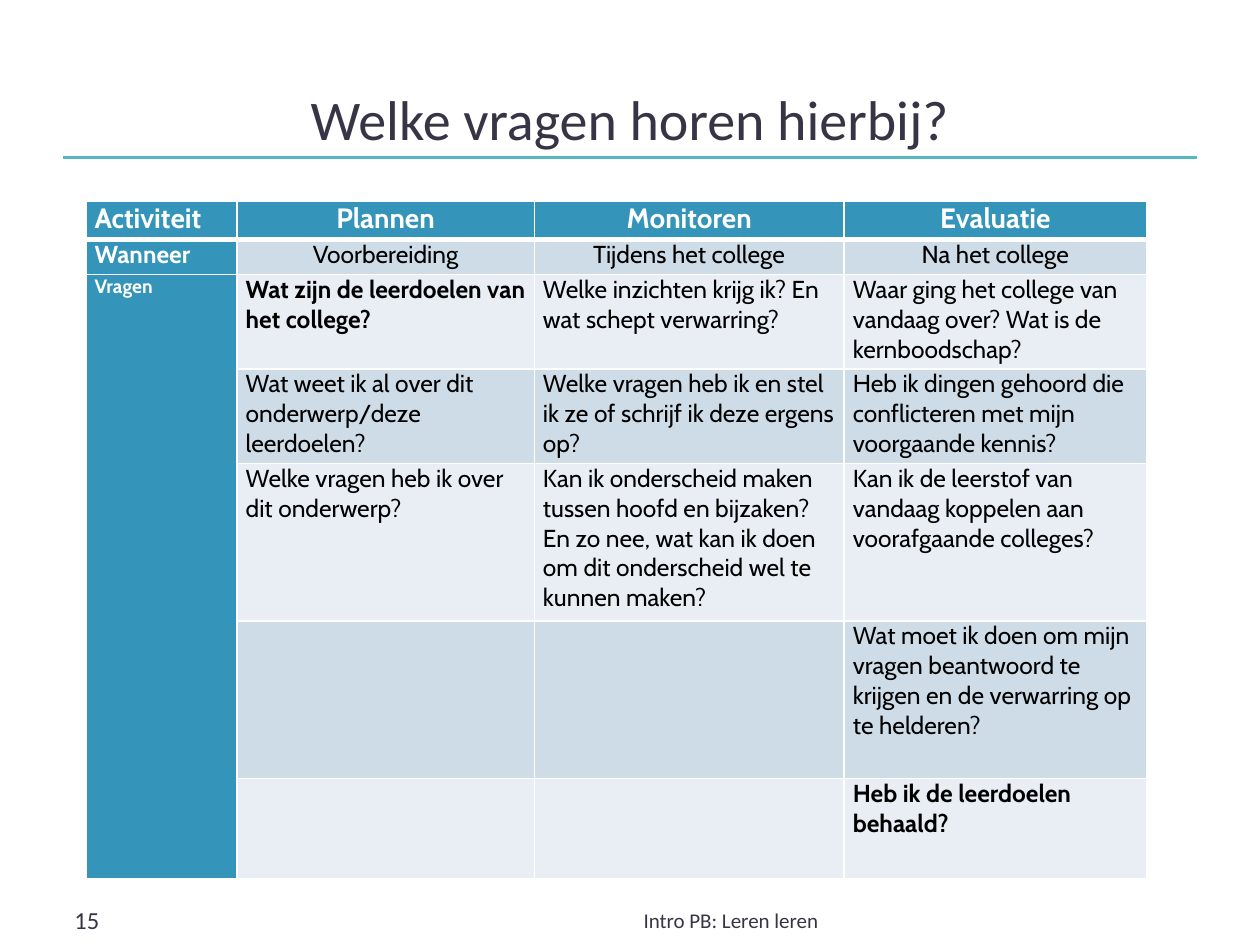
from lxml import etree
from pptx import Presentation
from pptx.dml.color import RGBColor
from pptx.enum.shapes import MSO_CONNECTOR
from pptx.enum.text import MSO_ANCHOR, PP_ALIGN
from pptx.oxml.ns import qn
from pptx.util import Pt

LEFT, CENTER = PP_ALIGN.LEFT, PP_ALIGN.CENTER
TOP, BOTTOM = MSO_ANCHOR.TOP, MSO_ANCHOR.BOTTOM
STRAIGHT = MSO_CONNECTOR.STRAIGHT

COLUMN_WIDTHS = [86.4, 169.9, 177.1, 172.8]
ROW_HEIGHTS = [21.6, 20.2, 54, 54, 90, 90, 56.9]
HEADINGS = ["Activiteit", "Plannen", "Monitoren", "Evaluatie"]
MOMENTS = ["Wanneer", "Voorbereiding", "Tijdens het college", "Na het college"]
QUESTIONS = [
    ["Vragen",
     "Wat zijn de leerdoelen van het college?",
     "Welke inzichten krijg ik? En wat schept verwarring?",
     "Waar ging het college van vandaag over? Wat is de kernboodschap?"],
    ["",
     "Wat weet ik al over dit onderwerp/deze leerdoelen?",
     "Welke vragen heb ik en stel ik ze of schrijf ik deze ergens op?",
     "Heb ik dingen gehoord die conflicteren met mijn voorgaande kennis?"],
    ["",
     "Welke vragen heb ik over dit onderwerp?",
     "Kan ik onderscheid maken tussen hoofd en bijzaken? En zo nee, "
     "wat kan ik doen om dit onderscheid wel te kunnen maken?",
     "Kan ik de leerstof van vandaag koppelen aan voorafgaande colleges?"],
    ["", "", "",
     "Wat moet ik doen om mijn vragen beantwoord te krijgen en de "
     "verwarring op te helderen?"],
    ["", "", "", "Heb ik de leerdoelen behaald?"],
]
GOAL_QUESTIONS = {(2, 1), (6, 3)}


def color(value):
    """Turn a hex string into a colour."""
    return RGBColor.from_string(value)


class SlideBuilder:
    """Holds the style and the current slide."""

    heading_font, table_font = "Calibri", "Cabin"
    ink, accent, rule = "373545", "3494BA", "58B6C0"
    white, black = "FFFFFF", "000000"
    bands = ["E8EEF3", "CEDCE7"]

    def __init__(self, slide):
        self.slide = slide

    def add_run(self, paragraph, text, size, font, hue, bold=False):
        """Add one styled run."""
        run = paragraph.add_run()
        run.text = text
        run.font.size = Pt(size)
        run.font.name = font
        run.font.bold = bold
        run.font.color.rgb = color(hue)

    def add_text(self, text, left, top, width, height, size, align=LEFT, anchor=TOP):
        """Add a text box with a single line."""
        box = self.slide.shapes.add_textbox(Pt(left), Pt(top), Pt(width), Pt(height))
        frame = box.text_frame
        frame.word_wrap = True
        frame.vertical_anchor = anchor
        paragraph = frame.paragraphs[0]
        paragraph.alignment = align
        self.add_run(paragraph, text, size, self.heading_font, self.ink)

    def add_rule(self, left, right, y):
        """Add a horizontal line."""
        line = self.slide.shapes.add_connector(STRAIGHT, Pt(left), Pt(y), Pt(right), Pt(y))
        line.line.color.rgb = color(self.rule)
        line.line.width = Pt(2.25)
        etree.SubElement(line._element.spPr, qn("a:effectLst"))

    def add_borders(self, cell, row):
        """Draw white cell borders, thicker below the heading row."""
        properties = cell._tc.get_or_add_tcPr()
        widths = {"L": 1, "R": 1, "T": 3 if row == 1 else 1, "B": 3 if row == 0 else 1}
        for side, width in widths.items():
            border = etree.SubElement(properties, qn(f"a:ln{side}"), w=str(Pt(width)))
            fill = etree.SubElement(border, qn("a:solidFill"))
            etree.SubElement(fill, qn("a:srgbClr"), val=self.white)

    def fill_cell(self, cell, text, row, column):
        """Style one table cell and write its text."""
        is_heading = row == 0 or column == 0
        cell.margin_left = cell.margin_right = Pt(5)
        cell.margin_top = cell.margin_bottom = Pt(0)
        self.add_borders(cell, row)
        cell.fill.solid()
        cell.fill.fore_color.rgb = color(self.accent if is_heading else self.bands[row % 2])
        if text:
            paragraph = cell.text_frame.paragraphs[0]
            paragraph.alignment = CENTER if row < 2 and column else LEFT
            size = 16 if row == 0 else 11 if row > 1 and column == 0 else 14
            self.add_run(paragraph, text, size, self.table_font,
                         self.white if is_heading else self.black,
                         is_heading or (row, column) in GOAL_QUESTIONS)

    def add_table(self, rows, left, top, widths, heights):
        """Add the table, with the last label spanning all question rows."""
        table = self.slide.shapes.add_table(
            len(rows), len(widths), Pt(left), Pt(top), Pt(sum(widths)), Pt(sum(heights))).table
        for column, width in zip(table.columns, widths):
            column.width = Pt(width)
        for table_row, height in zip(table.rows, heights):
            table_row.height = Pt(height)
        for row, texts in enumerate(rows):
            for column, text in enumerate(texts):
                self.fill_cell(table.cell(row, column), text, row, column)
        table.cell(2, 0).merge(table.cell(len(rows) - 1, 0))


def main():
    """Build and save the slide."""
    deck = Presentation()
    deck.slide_width, deck.slide_height = Pt(720), Pt(540)
    builder = SlideBuilder(deck.slides.add_slide(deck.slide_layouts[6]))
    builder.add_rule(36, 684, 90)
    builder.add_text("Intro PB: Leren leren", 300, 515, 235.5, 24, 12, CENTER)
    builder.add_text("15", 35.5, 513.5, 53, 24, 14)
    builder.add_text("Welke vragen horen hierbij?", 36, 12, 648, 78, 32, CENTER, BOTTOM)
    builder.add_table([HEADINGS, MOMENTS, *QUESTIONS], 49, 115.2, COLUMN_WIDTHS, ROW_HEIGHTS)
    deck.save("out.pptx")


if __name__ == "__main__":
    main()
